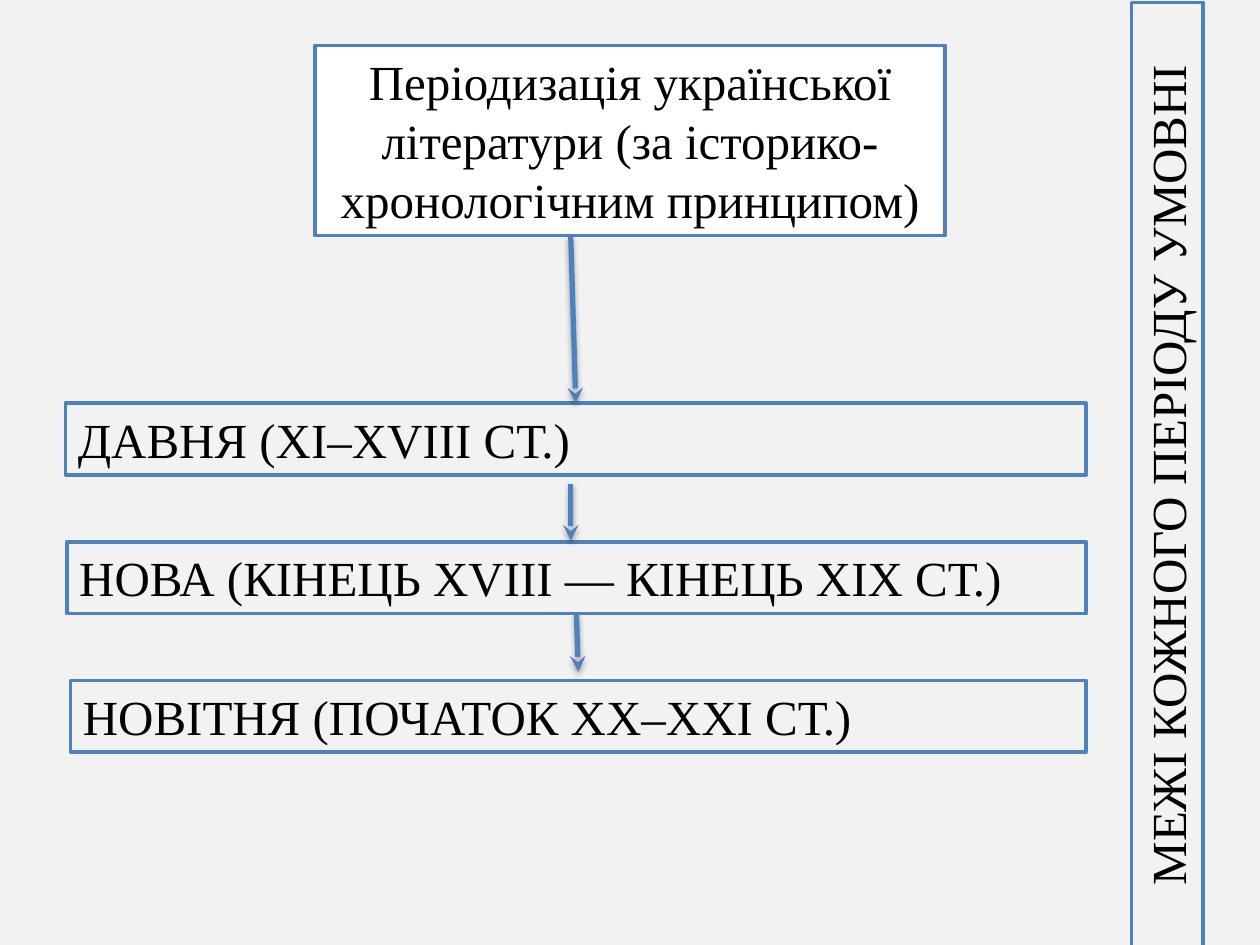
from lxml import etree
from pptx import Presentation
from pptx.dml.color import RGBColor
from pptx.enum.shapes import MSO_CONNECTOR as Connector, MSO_SHAPE as Shape
from pptx.enum.text import MSO_ANCHOR as Anchor, MSO_AUTO_SIZE as AutoSize, PP_ALIGN as Align
from pptx.oxml import parse_xml
from pptx.oxml.ns import qn
from pptx.util import Inches, Pt

COLORS = {"back": "F2F2F2", "title": "FFFFFF", "edge": "4F81BD", "text": "000000"}
FONT = "Times New Roman"
COLUMNS, ROWS = 100, 75
CELL = Inches(10) // COLUMNS
BAR_HEIGHT = 5.7
BAR_RIGHT = 86.2
BAR_TOP, BAR_STEP = 32, 11
PERIODS = [
    (5.2, "ДАВНЯ (XI–XVIII СТ.)"),
    (5.3, "НОВА (КІНЕЦЬ XVIII — КІНЕЦЬ XІX СТ.)"),
    (5.6, "НОВІТНЯ (ПОЧАТОК XX–XXI СТ.)"),
]
SHADOW = """<a:effectLst xmlns:a="http://schemas.openxmlformats.org/drawingml/2006/main">
<a:outerShdw blurRad="40000" dist="23000" dir="5400000" rotWithShape="0">
<a:srgbClr val="000000"><a:alpha val="35000"/></a:srgbClr></a:outerShdw></a:effectLst>"""


def rgb(name):
    """Return the named colour."""
    return RGBColor.from_string(COLORS[name])


def cells(*values):
    """Turn grid cells into lengths."""
    return [round(value * CELL) for value in values]


def add_box(s, box, text, fill="back", align=Align.LEFT):
    """Add an outlined rectangle with one line of thought in it."""
    sp = s.shapes.add_shape(Shape.RECTANGLE, *cells(*box))
    sp.shadow.inherit = False
    sp.fill.solid()
    sp.fill.fore_color.rgb = rgb(fill)
    sp.line.color.rgb = rgb("edge")
    sp.line.width = Pt(2)
    tf = sp.text_frame
    tf.word_wrap = True
    tf.auto_size = AutoSize.SHAPE_TO_FIT_TEXT
    tf.vertical_anchor = Anchor.TOP
    p = tf.paragraphs[0]
    p.alignment = align
    r = p.add_run()
    r.text = text
    r.font.name = FONT
    r.font.size = Pt(28)
    r.font.color.rgb = rgb("text")
    return sp


def add_arrow(s, start, end, source=None, target=None):
    """Add a shadowed arrow, joined to the boxes it meets at mid-side."""
    cx = s.shapes.add_connector(Connector.STRAIGHT, *cells(*start, *end))
    if source is not None:
        cx.begin_connect(source, 2)
    if target is not None:
        cx.end_connect(target, 0)
    cx.line.color.rgb = rgb("edge")
    cx.line.width = Pt(3)
    ln = cx.line._get_or_add_ln()
    etree.SubElement(ln, qn("a:tailEnd"), type="stealth")
    cx._element.spPr.append(parse_xml(SHADOW))


def add_periods(s, left_texts, right, top, step):
    """Stack the period bars at an equal step."""
    return [
        add_box(s, (left, top + i * step, right - left, BAR_HEIGHT), text)
        for i, (left, text) in enumerate(left_texts)
    ]


def add_arrows(s, bars, top):
    """Lead from the title through the periods."""
    add_arrow(s, (45.3, top), (45.5, BAR_TOP), target=bars[0])
    add_arrow(s, (45.3, 38.4), (45.3, 42.9))
    add_arrow(s, (45.9, 48.7), (45.9, 53.3), source=bars[1])


def add_side_note(s, box):
    """Add a note turned to read upwards, filling the upright box."""
    left, top, width, height = box
    shift = (height - width) / 2
    sp = add_box(s, (left - shift, top + shift, height, width),
                 "МЕЖІ КОЖНОГО ПЕРІОДУ УМОВНІ", align=Align.CENTER)
    sp.rotation = 270


def main():
    """Build and save the slide."""
    prs = Presentation()
    prs.slide_width, prs.slide_height = cells(COLUMNS, ROWS)
    s = prs.slides.add_slide(prs.slide_layouts[6])
    s.background.fill.solid()
    s.background.fill.fore_color.rgb = rgb("back")
    add_box(s, (25, 3.6, 50, 15.1),
            "Періодизація української літератури (за історико-хронологічним принципом)",
            "title", Align.CENTER)
    bars = add_periods(s, PERIODS, BAR_RIGHT, BAR_TOP, BAR_STEP)
    add_arrows(s, bars, 18.8)
    add_side_note(s, (89.8, 0.2, BAR_HEIGHT, ROWS))
    prs.save("out.pptx")


if __name__ == "__main__":
    main()
